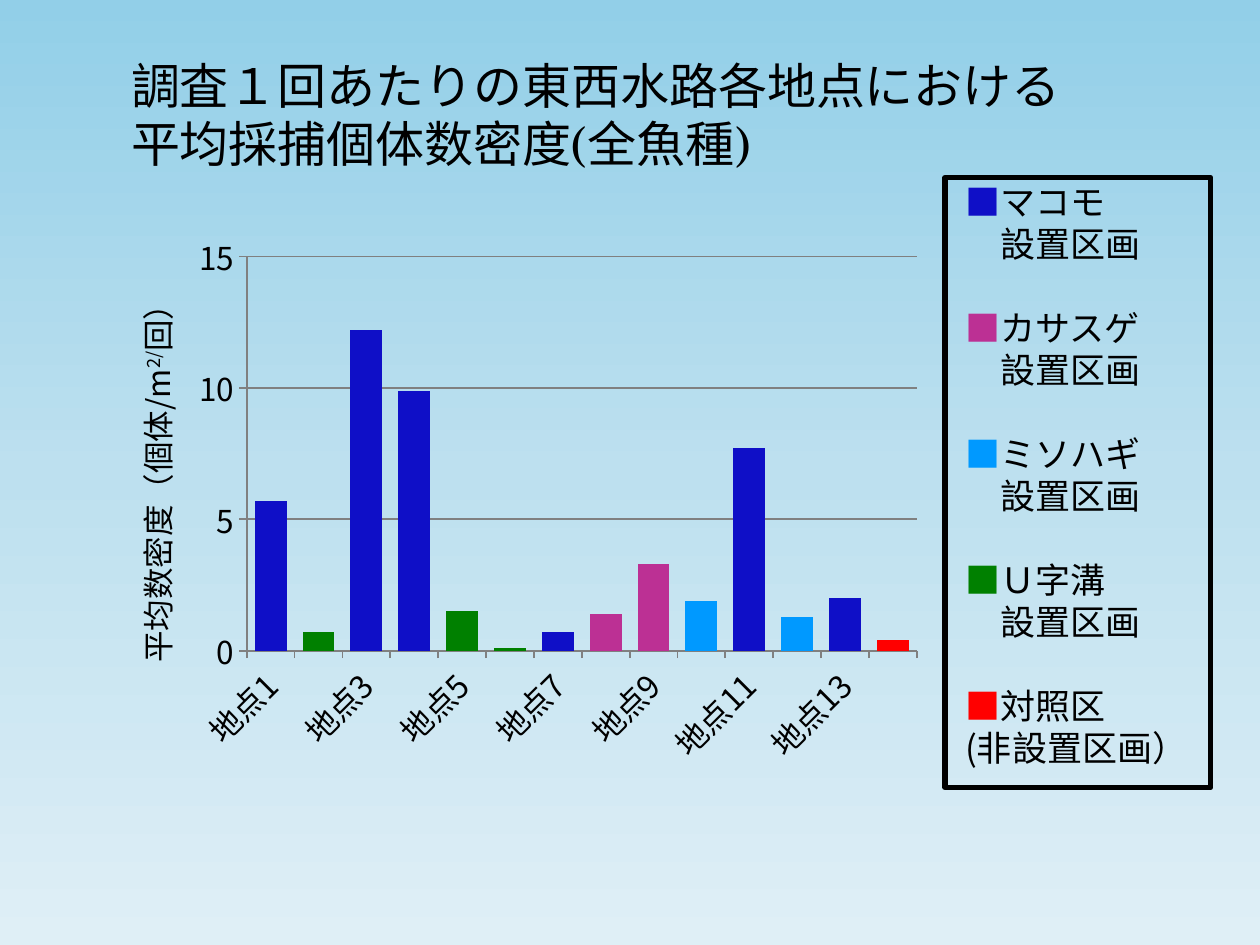
from copy import deepcopy
from dataclasses import dataclass
from lxml import etree
from pptx import Presentation
from pptx.chart.data import CategoryChartData
from pptx.dml.color import RGBColor as RGB
from pptx.enum.chart import XL_CHART_TYPE as ChartType, XL_TICK_MARK as Tick
from pptx.enum.shapes import MSO_SHAPE as Shape
from pptx.enum.text import MSO_ANCHOR as Anchor, PP_ALIGN as Align
from pptx.util import Inches, Pt


@dataclass(frozen=True)
class Theme:
    sans: str = "Noto Sans CJK JP"
    serif: str = "TeX Gyre Schola"
    title: Pt = Pt(28)
    legend: Pt = Pt(20)
    axis: Pt = Pt(18)
    ink: RGB = RGB.from_string("000000")
    grid: RGB = RGB.from_string("808080")
    series: RGB = RGB.from_string("2DA2BF")
    makomo: RGB = RGB.from_string("0F0FC7")
    kasasuge: RGB = RGB.from_string("BC3094")
    misohagi: RGB = RGB.from_string("0099FF")
    gutter: RGB = RGB.from_string("008000")
    control: RGB = RGB.from_string("FF0000")
    sky: tuple = ("92CFE8", "BDE0EF", "DFEFF6")


T = Theme()


def style(font, name, size):
    font.name, font.size, font.bold = name, size, False
    font.color.rgb = T.ink


def add_layout(parent, index, **values):
    C = "{%s}" % parent.nsmap["c"]
    for old in parent.findall(C + "layout"):
        parent.remove(old)
    layout = etree.Element(C + "layout")
    manual = etree.SubElement(layout, C + "manualLayout")
    for tag, val in values.items():
        etree.SubElement(manual, C + tag).set("val", str(val))
    parent.insert(index, layout)


prs = Presentation()
prs.slide_width, prs.slide_height = Inches(10), Inches(7.5)
s = prs.slides.add_slide(prs.slide_layouts[5])

fill = s.background.fill
fill.gradient()
fill.gradient_angle = 270
first = fill.gradient_stops[0]._gs
first.addnext(deepcopy(first))
for stop, color, pos in zip(fill.gradient_stops, T.sky, (0, 0.5, 1)):
    stop.color.rgb = RGB.from_string(color)
    stop.position = pos

data = CategoryChartData()
data.categories = [f"地点{n}" for n in range(1, 15)]
data.add_series("Series 1", (5.7, 0.7, 12.2, 9.9, 1.5, 0.1, 0.7,
                             1.4, 3.3, 1.9, 7.7, 1.3, 2, 0.4))
chart = s.shapes.add_chart(ChartType.COLUMN_STACKED, Inches(0.7), Inches(1.56),
                           Inches(8.62), Inches(4.67), data).chart
chart.has_legend = chart.has_title = False
style(chart.font, T.serif, Pt(10))
plot = chart.plots[0]
plot.gap_width, plot.overlap, plot.vary_by_categories = 50, 100, False
add_layout(chart._chartSpace.chart.plotArea, 0, layoutTarget="inner", xMode="edge",
           yMode="edge", x=0.146, y=0.102, w=0.617, h=0.67)

bars = plot.series[0]
bars.format.fill.solid()
bars.format.fill.fore_color.rgb = T.series
M, K, H, U = T.makomo, T.kasasuge, T.misohagi, T.gutter
for i, color in enumerate((M, U, M, M, U, U, M, K, K, H, M, H, M, T.control)):
    point = bars.points[i].format.fill
    point.solid()
    point.fore_color.rgb = color

cat, val = chart.category_axis, chart.value_axis
for axis in (cat, val):
    style(axis.tick_labels.font, T.sans, T.axis)
    axis.major_tick_mark = Tick.OUTSIDE
    axis.format.line.color.rgb = T.grid
    axis.format.line.width = Pt(1)
cat._element.txPr.bodyPr.set("rot", "-2700000")
val.minimum_scale, val.maximum_scale, val.major_unit = 0, 15, 5
val.tick_labels.number_format = r"#,##0;[Red]\-#,##0"
val.tick_labels.number_format_is_linked = False
val.major_gridlines.format.line.color.rgb = T.grid
val.major_gridlines.format.line.width = Pt(1)
tf = val.axis_title.text_frame
tf._txBody.bodyPr.set("rot", "-5400000")
p = tf.paragraphs[0]
for text, baseline in (("平均数密度（個体/m", 0), ("2/", 30000), ("回）", 0)):
    r = p.add_run()
    r.text = text
    style(r.font, T.sans, T.axis)
    r.font._element.set("baseline", str(baseline))
add_layout(val.axis_title._element, 1, xMode="edge", yMode="edge", x=0.036, y=0.15)

title = s.shapes.title
title.left, title.top = Inches(0.94), Inches(0.39)
title.width, title.height = Inches(7.81), Inches(1.04)
tf = title.text_frame
tf.text = "調査１回あたりの東西水路各地点における\n平均採捕個体数密度(全魚種)"
tf.vertical_anchor = Anchor.TOP
for p in tf.paragraphs:
    p.alignment = Align.LEFT
    p.line_spacing = Pt(33.5)
    style(p.font, T.serif, T.title)

frame = s.shapes.add_shape(Shape.RECTANGLE, Inches(7.5), Inches(1.41),
                           Inches(2.11), Inches(4.84))
frame.shadow.inherit = False
frame.fill.background()
frame.line.color.rgb = T.ink
frame.line.width = Pt(3)

tf = s.shapes.add_textbox(Inches(7.66), Inches(1.33), Inches(1.88), Inches(4.77)).text_frame
tf.word_wrap = True
tf.vertical_anchor = Anchor.BOTTOM
tf.margin_left = tf.margin_right = tf.margin_bottom = 0
tf.margin_top = Inches(0.05)
legend = (
    (T.makomo, "マコモ", "　設置区画"),
    (T.kasasuge, "カサスゲ", "　設置区画"),
    (T.misohagi, "ミソハギ", "　設置区画"),
    (T.gutter, "Ｕ字溝", "　設置区画"),
    (T.control, "対照区", "(非設置区画）"),
)
for i, (color, name, detail) in enumerate(legend):
    head = tf.add_paragraph() if i else tf.paragraphs[0]
    head.space_before = Pt(24 if i else 0)
    r = head.add_run()
    r.text = "■"
    r.font.color.rgb = color
    head.add_run().text = name
    tail = tf.add_paragraph()
    tail.text = detail
    for p in (head, tail):
        p.line_spacing = Pt(24)
        style(p.font, T.sans, T.legend)

prs.save("out.pptx")
